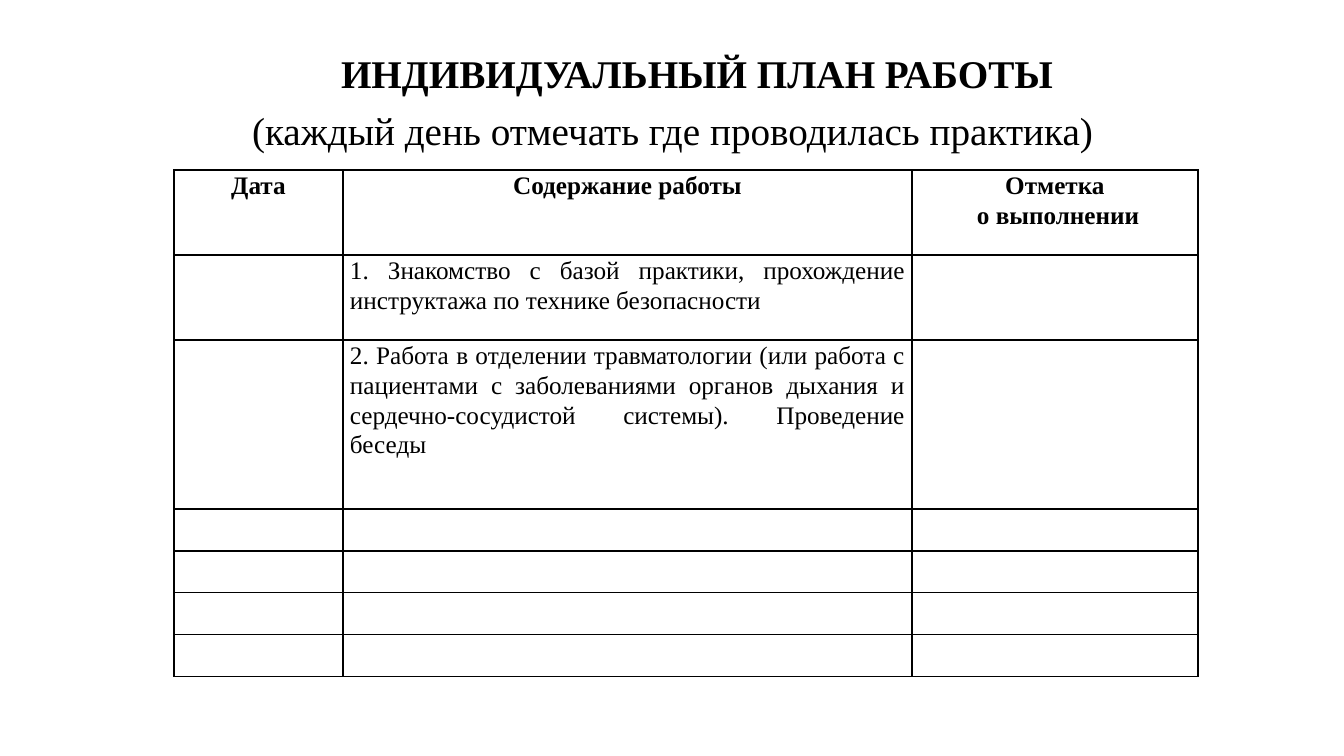
"""Builds the individual work plan slide with its table."""
from pptx import Presentation
from pptx import util as u
from pptx.dml.color import RGBColor
from pptx.enum import text
from pptx.oxml import parse_xml
from pptx.oxml.ns import nsdecls

BLACK = RGBColor(0, 0, 0)
CENTER = text.PP_ALIGN.CENTER
JUSTIFY = text.PP_ALIGN.JUSTIFY
COLS = [169, 569, 286]
ROWS = [85, 85, 169] + [42] * 4
CELLS = {
    (0, 0): ["Дата"],
    (0, 1): ["Содержание работы"],
    (0, 2): ["Отметка", " о выполнении"],
    (1, 1): ["1. Знакомство с базой практики, прохождение "
             "инструктажа по технике безопасности"],
    (2, 1): ["2. Работа в отделении травматологии (или работа с "
             "пациентами с заболеваниями органов дыхания и "
             "сердечно-сосудистой системы). Проведение беседы"],
}


class Deck:
    font = "Times New Roman"
    scale = 914400 / 100.8

    def __init__(self, width, height):
        self.prs = Presentation()
        self.prs.slide_width = self.px(width)
        self.prs.slide_height = self.px(height)
        self.s = self.prs.slides.add_slide(self.prs.slide_layouts[5])

    def px(self, n):
        return u.Emu(round(n * self.scale))

    def apply(self, target, **values):
        for name, value in values.items():
            setattr(target, name, value)

    def style(self, font, size, bold):
        self.apply(font, name=self.font, size=u.Pt(size), bold=bold)
        font.color.rgb = BLACK

    def title(self, box, lines, indent):
        sp = self.s.shapes.title
        sp.left, sp.top, sp.width, sp.height = map(self.px, box)
        tf = sp.text_frame
        self.apply(tf, margin_top=0, margin_bottom=0, word_wrap=True,
                   vertical_anchor=text.MSO_ANCHOR.TOP,
                   auto_size=text.MSO_AUTO_SIZE.NONE)
        p = tf.paragraphs[0]
        self.apply(p, alignment=CENTER, line_spacing=1.2)
        p._p.get_or_add_pPr().set("indent", str(self.px(indent)))
        self.style(p.font, 28, False)
        for i, line in enumerate(lines):
            if i:
                p.add_line_break()
            r = p.add_run()
            r.text = line
            self.style(r.font, 28, i == 0)

    def border(self, cell):
        tcPr = cell._tc.get_or_add_tcPr()
        for i, side in enumerate("LRTB"):
            tcPr.insert(i, parse_xml(
                f'<a:ln{side} {nsdecls("a")} w="12700"><a:solidFill>'
                f'<a:srgbClr val="{BLACK}"/></a:solidFill></a:ln{side}>'))

    def cell(self, cell, lines, header):
        self.apply(cell, margin_left=self.px(7), margin_right=self.px(7),
                   margin_top=0, margin_bottom=0)
        cell.fill.background()
        self.border(cell)
        tf = cell.text_frame
        for i, line in enumerate(lines):
            p = tf.add_paragraph() if i else tf.paragraphs[0]
            self.apply(p, alignment=CENTER if header else JUSTIFY,
                       line_spacing=1.07)
            r = p.add_run()
            r.text = line
            self.style(r.font, 18, header)

    def table(self, left, top, cols, rows, cells):
        box = map(self.px, (left, top, sum(cols), sum(rows)))
        tbl = self.s.shapes.add_table(len(rows), len(cols), *box).table
        self.apply(tbl, first_row=False, horz_banding=False)
        for col, width in zip(tbl.columns, cols):
            col.width = self.px(width)
        for i, height in enumerate(rows):
            tbl.rows[i].height = self.px(height)
            for j in range(len(cols)):
                self.cell(tbl.cell(i, j), cells.get((i, j), []), i == 0)


def main():
    deck = Deck(1344, 756)
    deck.title((93, 40, 1159, 146),
               ["ИНДИВИДУАЛЬНЫЙ ПЛАН РАБОТЫ",
                "(каждый день отмечать где проводилась практика)"], 49)
    deck.table(174, 170, COLS, ROWS, CELLS)
    deck.prs.save("out.pptx")


if __name__ == "__main__":
    main()
